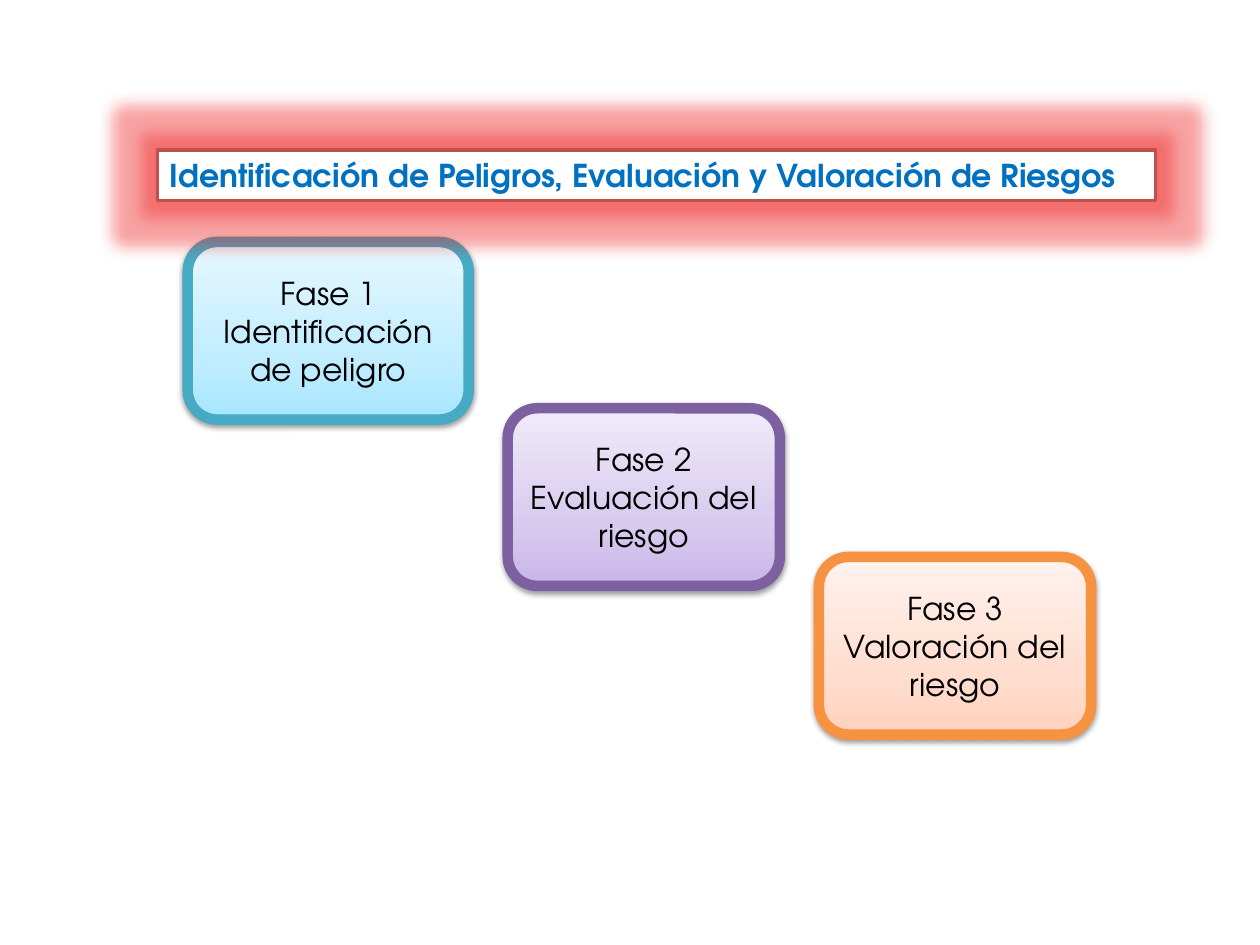
from lxml import etree
from pptx import Presentation
from pptx.dml.color import RGBColor
from pptx.enum.shapes import MSO_SHAPE
from pptx.enum.text import MSO_ANCHOR, PP_ALIGN
from pptx.oxml import parse_xml
from pptx.oxml.ns import qn
from pptx.util import Inches, Pt

CENTER, LEFT = PP_ALIGN.CENTER, PP_ALIGN.LEFT
MIDDLE, TOP = MSO_ANCHOR.MIDDLE, MSO_ANCHOR.TOP
RECT, ROUNDED = MSO_SHAPE.RECTANGLE, MSO_SHAPE.ROUNDED_RECTANGLE
WIDTH, HEIGHT = 10, 7.5
FONT = "TeX Gyre Adventor"
NS = 'xmlns:a="http://schemas.openxmlformats.org/drawingml/2006/main"'


def color(hex_code):
    return RGBColor.from_string(hex_code)


def write(shape, lines, *, ink, bold=False, align=LEFT, anchor=TOP):
    frame = shape.text_frame
    frame.word_wrap = True
    frame.vertical_anchor = anchor
    for index, line in enumerate(lines):
        para = frame.paragraphs[0] if index == 0 else frame.add_paragraph()
        para.alignment = align
        span = para.add_run()
        span.text = line
        span.font.name = FONT
        span.font.size = Pt(18)
        span.font.bold = bold
        span.font.color.rgb = color(ink)


deck = Presentation()
deck.slide_width, deck.slide_height = Inches(WIDTH), Inches(HEIGHT)
page = deck.slides.add_slide(deck.slide_layouts[6])

# Phases stepping down: left, top, width, border, gradient, text
phases = [
    (1.49, 1.92, 2.23, "46AAC5", ("A7E6FF", "C1EDFF", "E7F8FF"),
     ("Fase 1", "Identificación de peligro")),
    (4.03, 3.24, 2.16, "7D60A0", ("C9B5E8", "D8CBEE", "F0EAF9"),
     ("Fase 2", "Evaluación del riesgo")),
    (6.5, 4.42, 2.16, "F69240", ("FFD2BD", "FFDED0", "FFF2ED"),
     ("Fase 3", "Valoración del riesgo")),
]
STOPS = (0, 35, 100)
SHADOW = (f'<a:outerShdw {NS} blurRad="{Pt(3.1)}" dist="{Pt(1.6)}" dir="5400000" '
          'rotWithShape="0"><a:srgbClr val="000000"><a:alpha val="38000"/>'
          '</a:srgbClr></a:outerShdw>')
for left, top, width, border, shades, lines in phases:
    box = page.shapes.add_shape(ROUNDED, Inches(left), Inches(top),
                                Inches(width), Inches(1.41))
    box.line.color.rgb = color(border)
    box.line.width = Pt(6)

    # Three-stop gradient, darkest at the bottom
    box.fill.gradient()
    box.fill.gradient_angle = 90
    stops = box._element.spPr.find(".//" + qn("a:gsLst"))
    for stop in list(stops):
        stops.remove(stop)
    for position, shade in zip(STOPS, shades):
        stop = etree.SubElement(stops, qn("a:gs"), pos=str(position * 1000))
        etree.SubElement(stop, qn("a:srgbClr"), val=shade)

    box.shadow.inherit = False
    box._element.spPr.find(qn("a:effectLst")).append(parse_xml(SHADOW))
    write(box, lines, ink="000000", align=CENTER, anchor=MIDDLE)

# Title with a red glow
GLOW = (f'<a:glow {NS} rad="{Pt(18)}"><a:srgbClr val="EE1C1C">'
        '<a:alpha val="40000"/></a:srgbClr></a:glow>')
title = page.shapes.add_shape(RECT, Inches(1.25), Inches(1.19),
                              Inches(7.92), Inches(0.4))
title.fill.solid()
title.fill.fore_color.rgb = color("FFFFFF")
title.line.color.rgb = color("C0504D")
title.line.width = Pt(2)
title.shadow.inherit = False
title._element.spPr.find(qn("a:effectLst")).append(parse_xml(GLOW))
write(title, ["Identificación de Peligros, Evaluación y Valoración de Riesgos"],
      ink="0070C0", bold=True)

deck.save("out.pptx")
